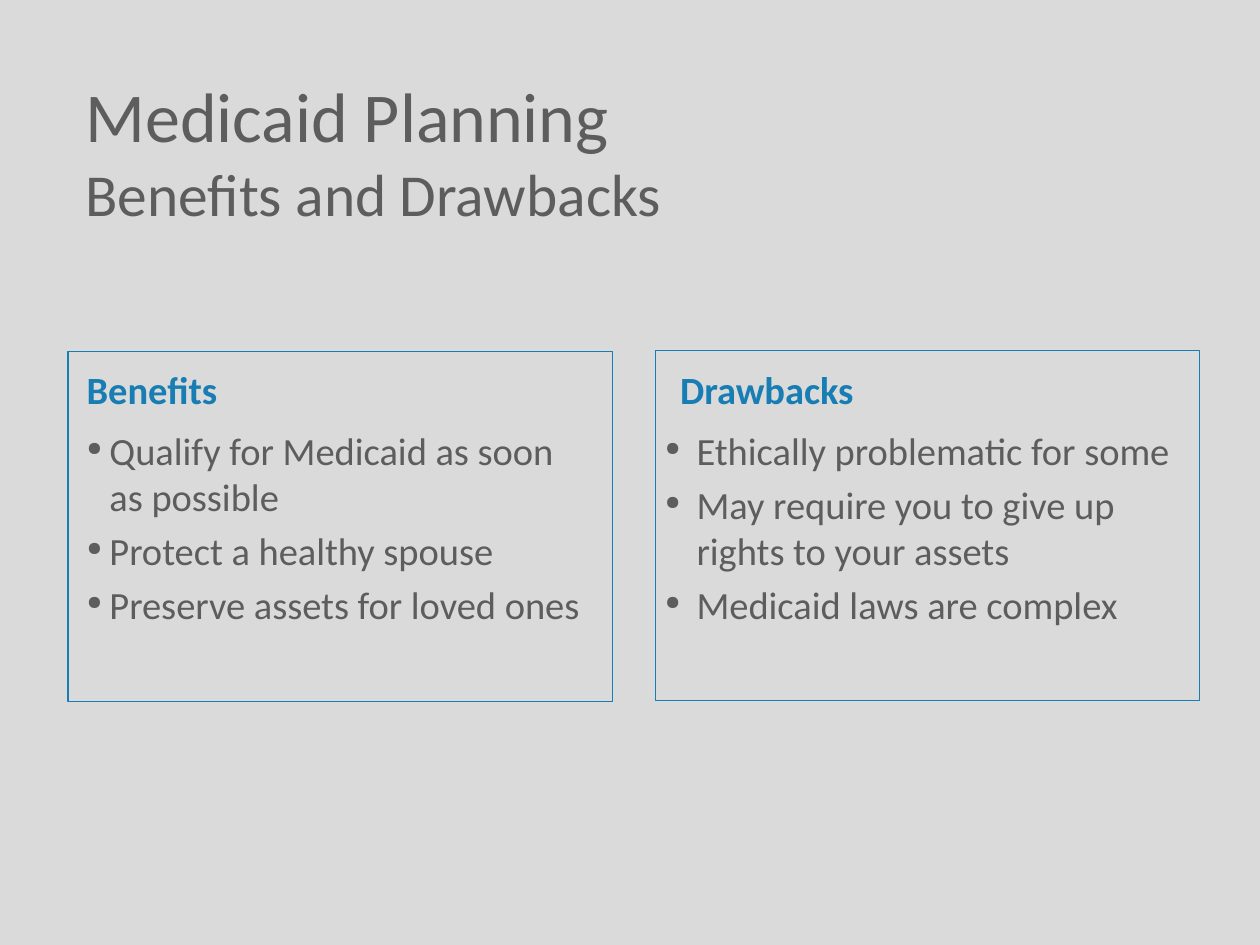
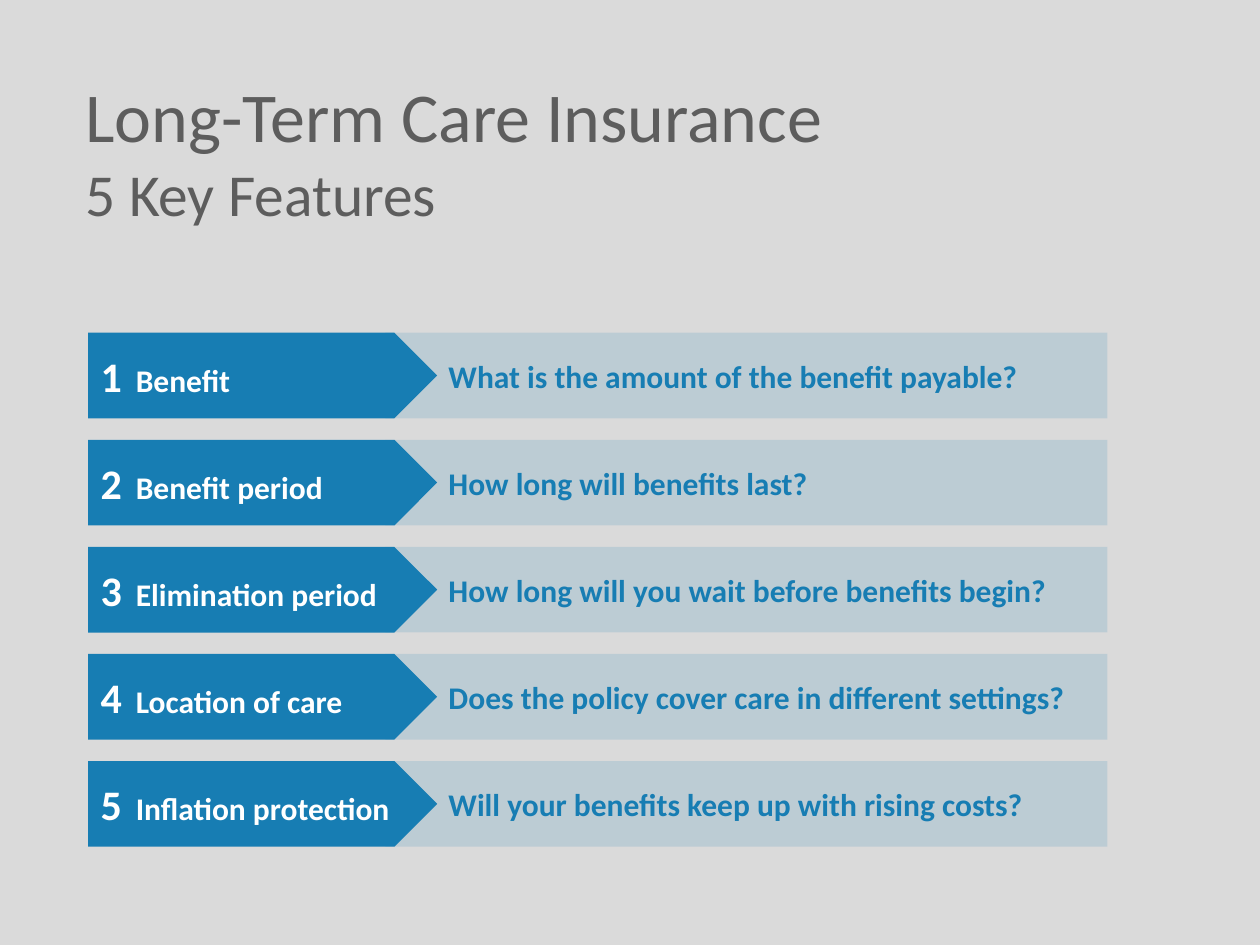
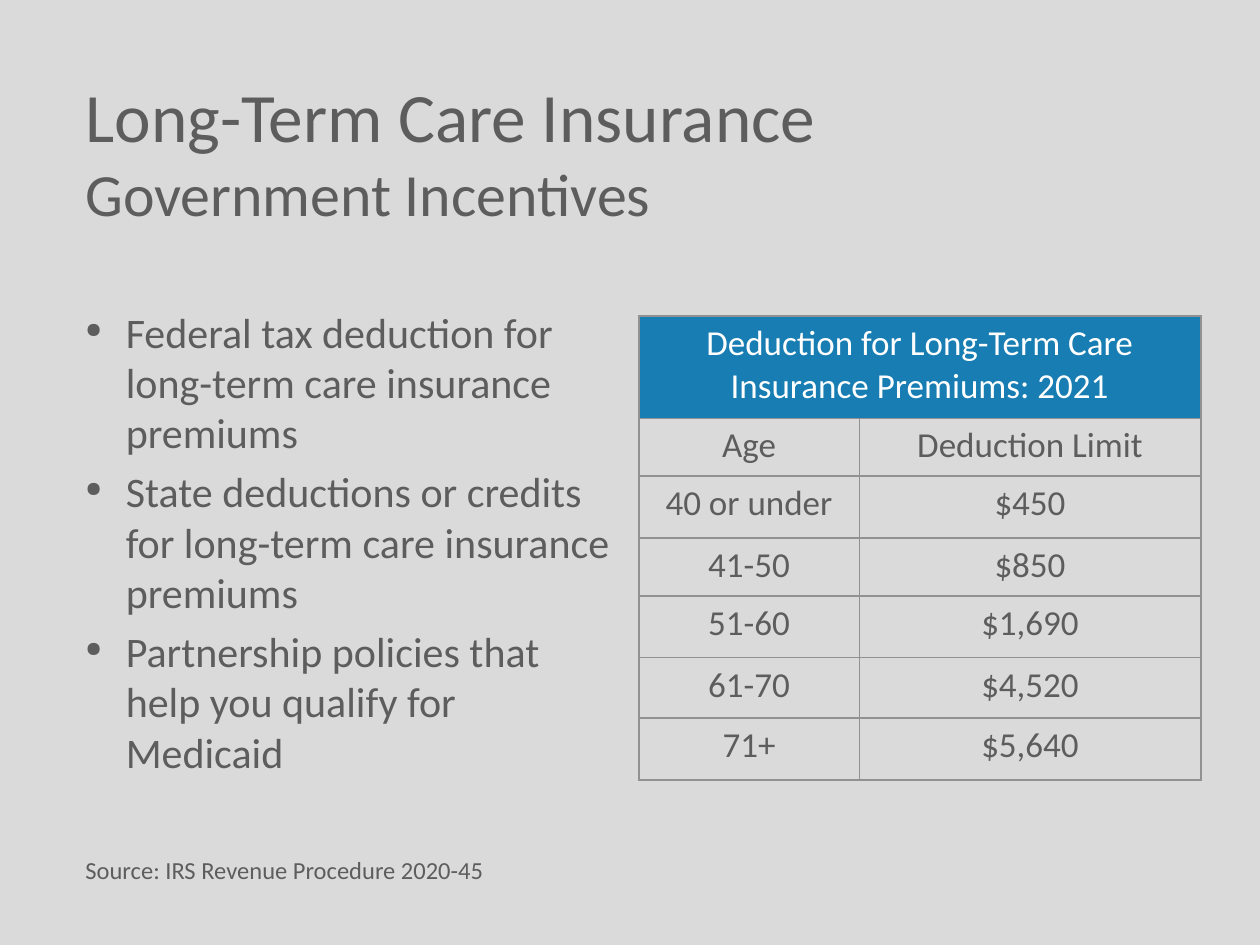
"""Build three slides on Medicaid planning and long-term care insurance."""
from lxml import etree
from pptx import Presentation
from pptx.dml.color import RGBColor
from pptx.enum.shapes import MSO_SHAPE
from pptx.enum.text import MSO_ANCHOR, PP_ALIGN
from pptx.oxml.ns import qn
from pptx.util import Inches, Pt

RECT, PLATE = MSO_SHAPE.RECTANGLE, MSO_SHAPE.PENTAGON
MIDDLE = MSO_ANCHOR.MIDDLE
LEFT, CENTER = PP_ALIGN.LEFT, PP_ALIGN.CENTER
FONT = "Calibri"
GRAY, BLUE, WHITE, PAPER, RULE = "5D5D5D", "177DB3", "FFFFFF", "DADADA", "919191"
rgb = RGBColor.from_string


def write(frame, lines, size, color=GRAY, bold=False, align=LEFT, hang=0):
    """Fill a frame with paragraphs; a hang in inches turns them into bullets."""
    frame.word_wrap = True
    frame.text = "\n".join(lines)
    for i, para in enumerate(frame.paragraphs):
        para.alignment = align
        if hang:
            props = para._p.get_or_add_pPr()
            props.set("marL", str(Inches(hang)))
            props.set("indent", str(-Inches(hang)))
            tint = etree.SubElement(props, qn("a:buClr"))
            etree.SubElement(tint, qn("a:srgbClr"), val=color)
            etree.SubElement(props, qn("a:buSzPct"), val="50000")
            etree.SubElement(props, qn("a:buChar"), char="●")
        if i:
            para.space_before = Pt(size * 0.2)
        for run in para.runs:
            run.font.name = FONT
            run.font.size = Pt(size)
            run.font.bold = bold
            run.font.color.rgb = rgb(color)


def place(slide, x, y, w, h, kind=None):
    """Add a text box, or a shape of the given kind without fill and line."""
    spot = [Inches(v) for v in (x, y, w, h)]
    if kind is None:
        return slide.shapes.add_textbox(*spot)
    shape = slide.shapes.add_shape(kind, *spot)
    shape.shadow.inherit = False
    shape.fill.background()
    shape.line.fill.background()
    return shape


deck = Presentation()
deck.slide_width, deck.slide_height = Inches(10), Inches(7.5)

titles = [
    ("Medicaid Planning", "Benefits and Drawbacks", 40, 34),
    ("Long-Term Care Insurance", "5 Key Features", 40, 34),
    ("Long-Term Care Insurance", "Government Incentives", 39.6, 34.2),
]
slides = []
for top, sub, big, small in titles:
    slide = deck.slides.add_slide(deck.slide_layouts[6])
    slide.background.fill.solid()
    slide.background.fill.fore_color.rgb = rgb(PAPER)
    frame = place(slide, 0.58, 0.53, 7.99, 1.33).text_frame
    frame.vertical_anchor = MIDDLE
    write(frame, [f"{top}\v{sub}"], big)
    frame.paragraphs[0].runs[1].font.size = Pt(small)
    slides.append(slide)
plan, traits, perks = slides

panels = [
    ("Benefits", 0.54, 2.79, 0.59, 0.59, 0.18,
     ["Qualify for Medicaid as soon\vas possible", "Protect a healthy spouse",
      "Preserve assets for loved ones"]),
    ("Drawbacks", 5.2, 2.78, 5.3, 5.18, 0.25,
     ["Ethically problematic for some",
      "May require you to give up rights to your assets",
      "Medicaid laws are complex"]),
]
for head, x, y, head_x, list_x, hang, points in panels:
    panel = place(plan, x, y, 4.32, 2.78, RECT)
    panel.line.color.rgb = rgb(BLUE)
    panel.line.width = Pt(0.75)
    write(place(plan, head_x, 2.86, 3.64, 0.47).text_frame, [head], 22, BLUE, True)
    write(place(plan, list_x, 3.34, 4.45, 2.19).text_frame, points, 22, hang=hang)

features = [
    ("Benefit", "What is the amount of the benefit payable?"),
    ("Benefit period", "How long will benefits last?"),
    ("Elimination period", "How long will you wait before benefits begin?"),
    ("Location of care", "Does the policy cover care in different settings?"),
    ("Inflation protection", "Will your benefits keep up with rising costs?"),
]
for i, (label, ask) in enumerate(features):
    y = 2.64 + 0.85 * i
    band = place(traits, 3.06, y, 5.73, 0.68, RECT)
    plate = place(traits, 0.7, y, 2.77, 0.68, PLATE)
    for shape in (band, plate):
        shape.fill.solid()
        shape.fill.fore_color.rgb = rgb(BLUE)
        shape.text_frame.vertical_anchor = MIDDLE
    tone = band._element.spPr.find(qn("a:solidFill")).find(qn("a:srgbClr"))
    etree.SubElement(tone, qn("a:alpha"), val="15000")
    band.text_frame.margin_left = Inches(0.5)
    write(band.text_frame, [ask], 18, BLUE, True)

    frame = plate.text_frame
    frame.margin_right = 0
    write(frame, [str(i + 1)], 24, WHITE, True)
    para = frame.paragraphs[0]
    tabs = etree.SubElement(para._p.get_or_add_pPr(), qn("a:tabLst"))
    etree.SubElement(tabs, qn("a:tab"), pos=str(Inches(0.28)), algn="l")
    run = para.add_run()
    run.text = f"\t{label}"
    run.font.name, run.font.size, run.font.bold = FONT, Pt(18), True
    run.font.color.rgb = rgb(WHITE)

points = [
    "Federal tax deduction for long-term care insurance premiums",
    "State deductions or credits for long-term care insurance premiums",
    "Partnership policies that help you qualify for Medicaid",
]
write(place(perks, 0.58, 2.38, 4.39, 3.91).text_frame, points, 24, hang=0.32)

rows = [
    ("Deduction for Long-Term Care Insurance Premiums: 2021", ""),
    ("Age", "Deduction Limit"),
    ("40 or under", "$450"),
    ("41-50", "$850"),
    ("51-60", "$1,690"),
    ("61-70", "$4,520"),
    ("71+", "$5,640"),
]
table = perks.shapes.add_table(
    len(rows), 2, Inches(5.07), Inches(2.51), Inches(4.46), Inches(3.67)).table
table.first_row = table.horz_banding = False
for col, wide in zip(table.columns, (1.75, 2.71)):
    col.width = Inches(wide)
for row, tall in zip(table.rows, (0.81, 0.46, 0.49, 0.46, 0.49, 0.48, 0.49)):
    row.height = Inches(tall)
table.cell(0, 0).merge(table.cell(0, 1))
for r, texts in enumerate(rows):
    for c, text in enumerate(texts):
        cell = table.cell(r, c)
        props = cell._tc.get_or_add_tcPr()
        for side in ("lnL", "lnR", "lnT", "lnB"):
            edge = etree.SubElement(props, qn(f"a:{side}"), w=str(Pt(1)))
            ink = etree.SubElement(edge, qn("a:solidFill"))
            etree.SubElement(ink, qn("a:srgbClr"), val=RULE)
        if r == 0:
            cell.fill.solid()
            cell.fill.fore_color.rgb = rgb(BLUE)
        else:
            cell.fill.background()
        if text:
            write(cell.text_frame, [text], 20, GRAY if r else WHITE, align=CENTER)

note = place(perks, 0.58, 6.74, 5.23, 0.34).text_frame
write(note, ["Source: IRS Revenue Procedure 2020-45"], 14)

deck.save("out.pptx")
